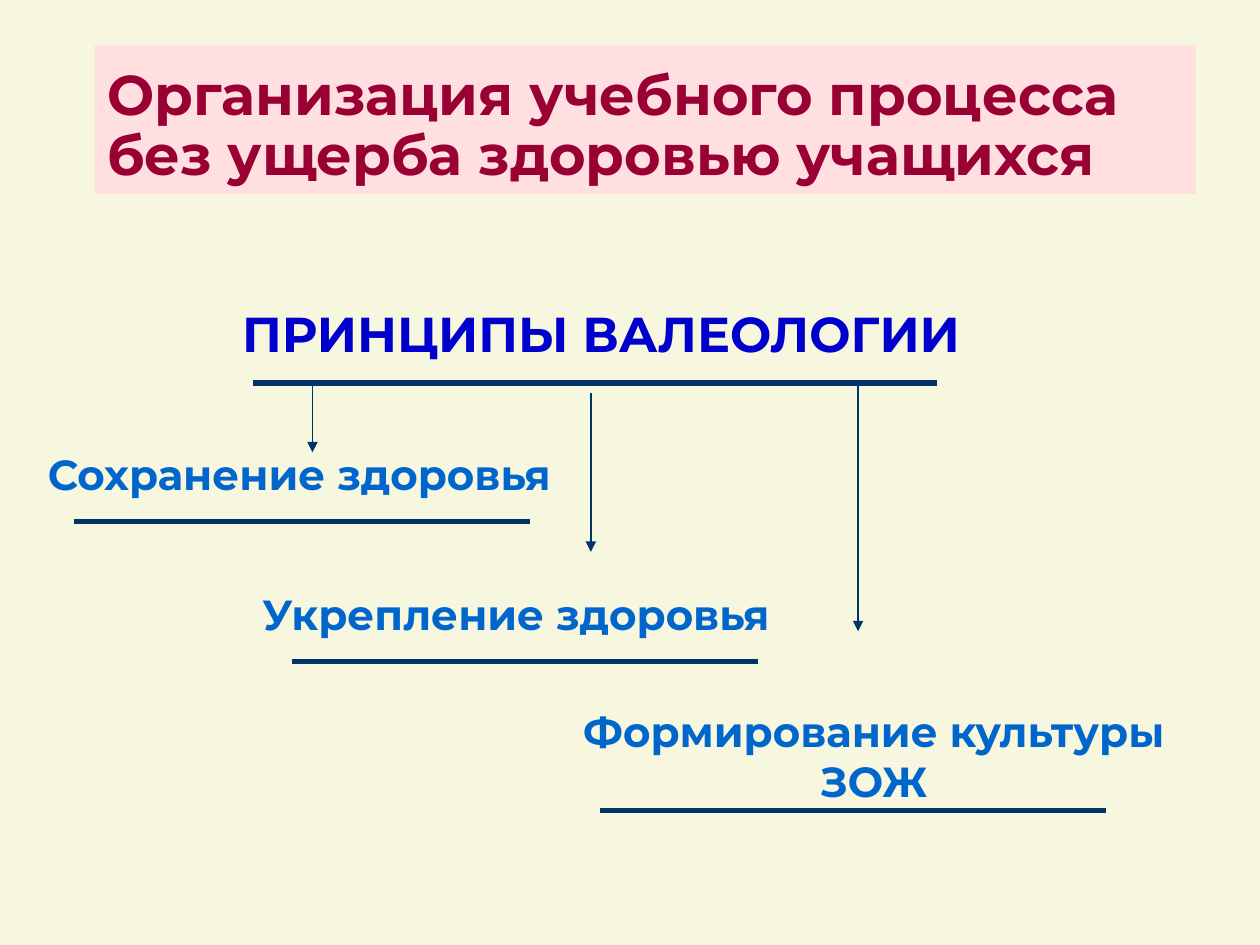
from pptx import Presentation
from pptx.dml.color import RGBColor
from pptx.enum.shapes import MSO_CONNECTOR
from pptx.enum.text import MSO_ANCHOR, MSO_AUTO_SIZE, PP_ALIGN
from pptx.oxml.ns import qn
from pptx.util import Inches, Pt
from lxml.etree import SubElement

CREAM = RGBColor(0xF7, 0xF6, 0xDF)
PINK = RGBColor(0xFF, 0xDF, 0xDF)
WINE = RGBColor(0x99, 0x00, 0x33)
NAVY = RGBColor(0x00, 0x33, 0x66)
BLUE = RGBColor(0x00, 0x00, 0xCC)
AZURE = RGBColor(0x00, 0x66, 0xCC)
FACE = "Montserrat"

TITLE = "Организация учебного процесса без ущерба здоровью учащихся"
LABELS = [
    ("ПРИНЦИПЫ ВАЛЕОЛОГИИ", (1.74, 2.36, 6.06, 0.57), 28, BLUE),
    ("Сохранение здоровья", (0.2, 3.51, 4.35, 0.5), 24, AZURE),
    ("Укрепление здоровья", (1.85, 4.62, 4.49, 0.5), 24, AZURE),
    ("Формирование культуры ЗОЖ", (4.21, 5.55, 5.45, 0.91), 24, AZURE),
]
RULES = [(2.01, 7.44, 3.04), (0.59, 4.21, 4.14), (2.32, 6.02, 5.25), (4.76, 8.78, 6.43)]
ARROWS = [(2.48, 3.04, 3.59), (4.69, 3.12, 4.38), (6.81, 3.04, 5.01)]


def style(par, size, color):
    font = par.font
    font.name, font.size, font.bold = FACE, Pt(size), True
    font.color.rgb = color


def place(shape, box):
    shape.left, shape.top, shape.width, shape.height = map(Inches, box)


def add_line(slide, ends, width, arrow=False):
    line = slide.shapes.add_connector(MSO_CONNECTOR.STRAIGHT, *map(Inches, ends))
    line.line.color.rgb = NAVY
    line.line.width = Pt(width)
    if arrow:
        SubElement(line.line._get_or_add_ln(), qn("a:tailEnd"), type="triangle")
    SubElement(line._element.spPr, qn("a:effectLst"))


def add_title(slide):
    title = slide.shapes.title
    place(title, (0.75, 0.36, 8.74, 1.18))
    title.fill.solid()
    title.fill.fore_color.rgb = PINK
    frame = title.text_frame
    frame.text = TITLE
    frame.word_wrap = True
    frame.auto_size = MSO_AUTO_SIZE.NONE
    frame.vertical_anchor = MSO_ANCHOR.BOTTOM
    par = frame.paragraphs[0]
    par.alignment = PP_ALIGN.LEFT
    par.line_spacing = 0.9
    style(par, 32, WINE)


def add_label(slide, text, box, size, color):
    frame = slide.shapes.add_textbox(*map(Inches, box)).text_frame
    frame.text = text
    frame.word_wrap = True
    par = frame.paragraphs[0]
    par.alignment = PP_ALIGN.CENTER
    style(par, size, color)


def main():
    deck = Presentation()
    deck.slide_width, deck.slide_height = Inches(10), Inches(7.5)
    slide = deck.slides.add_slide(deck.slide_layouts[5])
    slide.background.fill.solid()
    slide.background.fill.fore_color.rgb = CREAM
    add_title(slide)
    for label in LABELS:
        add_label(slide, *label)
    for left, right, y in RULES:
        add_line(slide, (left, y, right, y), 3)
    for x, top, low in ARROWS:
        add_line(slide, (x, top, x, low), 0.75, arrow=True)
    deck.save("out.pptx")


if __name__ == "__main__":
    main()
